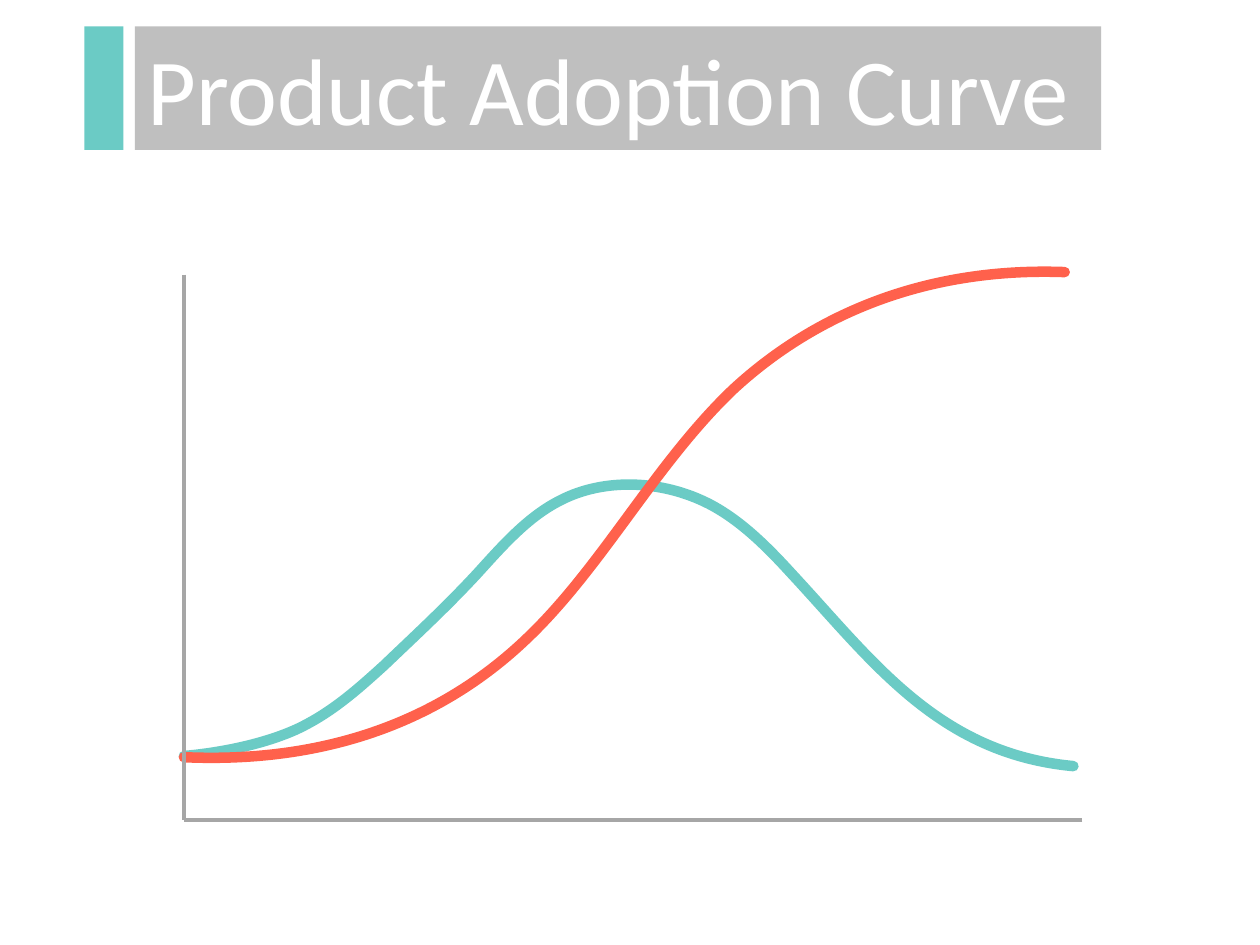
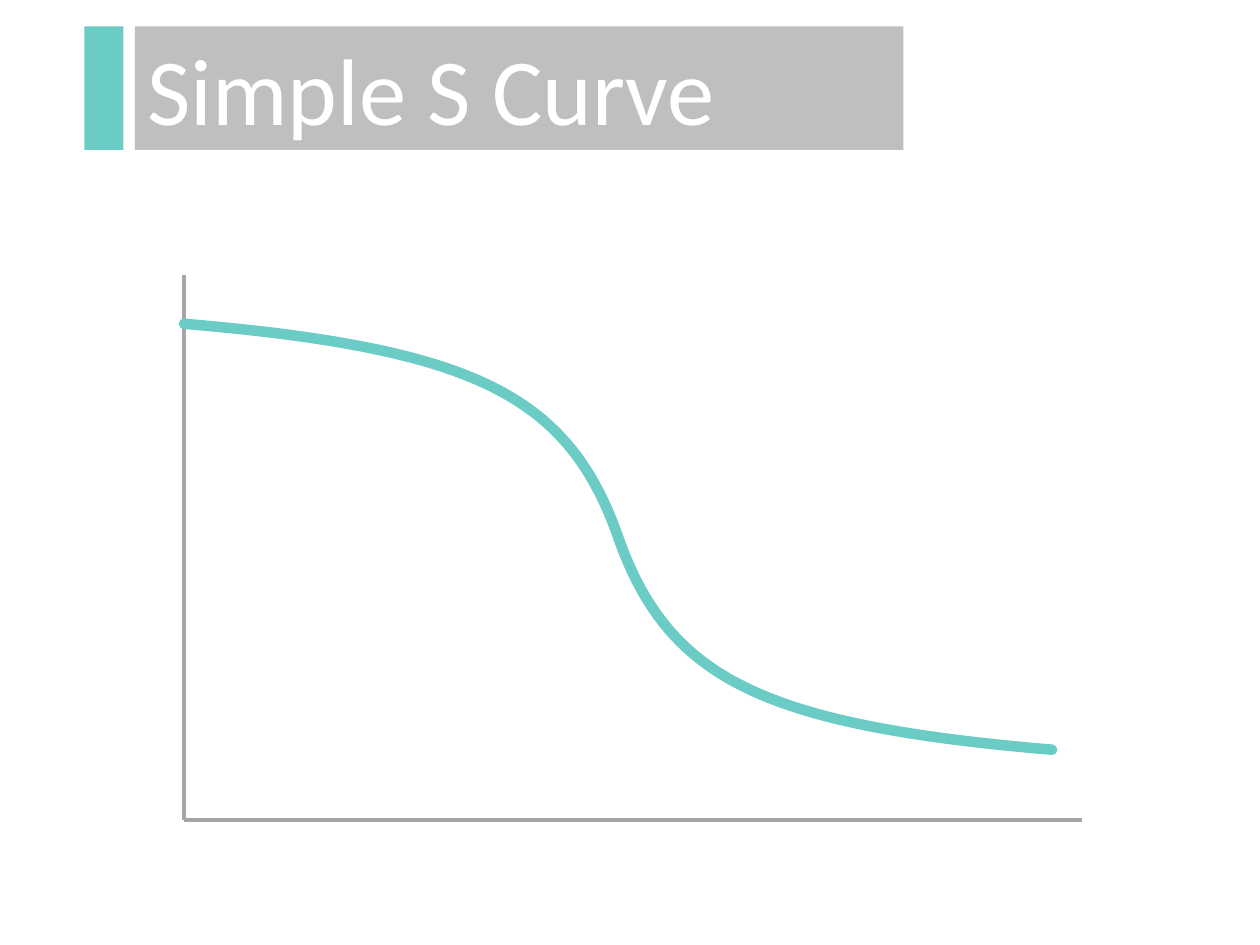
"""Build two slides of curve diagrams: a product adoption curve and a simple S curve."""
from lxml import etree
from pptx import Presentation
from pptx.dml.color import RGBColor
from pptx.enum import shapes, text
from pptx.oxml import ns
from pptx.util import Inches, Pt

TEAL = RGBColor(0x6B, 0xCB, 0xC5)
CORAL = RGBColor(0xFF, 0x61, 0x4C)
TITLE_GREY = RGBColor(0xBF, 0xBF, 0xBF)
AXIS_GREY = RGBColor(0xA6, 0xA6, 0xA6)
WHITE = RGBColor(0xFF, 0xFF, 0xFF)

BAND_TOP, BAND_HEIGHT = 0.21, 0.98
ORIGIN = (1.46, 6.51)
Y_AXIS = (1.46, 2.18) + ORIGIN
X_AXIS = (8.59, 6.51) + ORIGIN

ADOPTERS = [
    (8.52, 6.08), (7.45, 5.98), (6.93, 5.25), (6.29, 4.56),
    (6.09, 4.34), (5.88, 4.13), (5.63, 4), (5.26, 3.81), (4.8, 3.79), (4.45, 3.97),
    (4.19, 4.1), (3.99, 4.33), (3.79, 4.55), (3.54, 4.82), (3.29, 5.05), (3.05, 5.28),
    (2.84, 5.47), (2.63, 5.66), (2.35, 5.79), (2.06, 5.92), (1.7, 5.98), (1.46, 6),
]
MARKET_SHARE = [
    (1.46, 6.01), (2.59, 6.06), (3.5, 5.72), (4.18, 5.07),
    (4.78, 4.5), (5.2, 3.68), (5.82, 3.09), (6.48, 2.48), (7.37, 2.12), (8.45, 2.16),
]


def add_axis(page, ends):
    """Draw a grey axis between two points."""
    axis = page.shapes.add_connector(
        shapes.MSO_CONNECTOR.STRAIGHT, *(Inches(value) for value in ends))
    axis.line.color.rgb = AXIS_GREY
    axis.line.width = Pt(2)
    etree.SubElement(axis._element.spPr, ns.qn("a:effectLst"))


def add_curve(page, controls, color):
    """Draw a chain of cubic curves through its control points."""
    start, *rest = [(Inches(x), Inches(y)) for x, y in controls]
    builder = page.shapes.build_freeform(*start)
    builder.add_line_segments(rest, close=False)
    curve = builder.convert_to_shape()
    curve.shadow.inherit = False
    curve.fill.background()
    curve.line.color.rgb = color
    curve.line.width = Pt(6)
    properties = curve._element.spPr
    outline = properties.find(ns.qn("a:ln"))
    outline.set("cap", "rnd")
    etree.SubElement(outline, ns.qn("a:round"))

    track = next(properties.iter(ns.qn("a:path")))
    segments = track.findall(ns.qn("a:lnTo"))
    for first in range(0, len(segments), 3):
        cubic = etree.SubElement(track, ns.qn("a:cubicBezTo"))
        for segment in segments[first:first + 3]:
            cubic.append(segment[0])
            track.remove(segment)


middle_x, middle_y, half_width = 4.905, 4.26, 3.445
offsets = [half_width * step / 360 for step in range(-360, 361)]
s_curve = [(middle_x + d, middle_y + d / (0.49 * abs(d) + 0.35)) for d in offsets]

slides = [
    ("Product Adoption Curve", 7.67, True, [(ADOPTERS, TEAL), (MARKET_SHARE, CORAL)]),
    ("Simple S Curve", 6.1, False, [(s_curve, TEAL)]),
]

deck = Presentation()
deck.slide_width, deck.slide_height = Inches(10), Inches(7.5)

for heading, title_width, y_axis_in_front, curves in slides:
    page = deck.slides.add_slide(deck.slide_layouts[5])

    accent = page.shapes.add_shape(
        shapes.MSO_SHAPE.RECTANGLE,
        Inches(0.67), Inches(BAND_TOP), Inches(0.31), Inches(BAND_HEIGHT))
    accent.shadow.inherit = False
    accent.fill.solid()
    accent.fill.fore_color.rgb = TEAL
    accent.line.fill.background()

    title = page.shapes.title
    accent._element.addnext(title._element)
    title.left, title.top = Inches(1.07), Inches(BAND_TOP)
    title.width, title.height = Inches(title_width), Inches(BAND_HEIGHT)
    title.fill.solid()
    title.fill.fore_color.rgb = TITLE_GREY
    frame = title.text_frame
    frame.text = heading
    frame.auto_size = text.MSO_AUTO_SIZE.NONE
    frame.vertical_anchor = text.MSO_ANCHOR.MIDDLE
    para = frame.paragraphs[0]
    para.alignment = text.PP_ALIGN.LEFT
    para.font.name = "Calibri"
    para.font.size = Pt(54)
    para.font.color.rgb = WHITE

    if not y_axis_in_front:
        add_axis(page, Y_AXIS)
    add_axis(page, X_AXIS)
    for controls, color in curves:
        add_curve(page, controls, color)
    if y_axis_in_front:
        add_axis(page, Y_AXIS)

deck.save("out.pptx")
